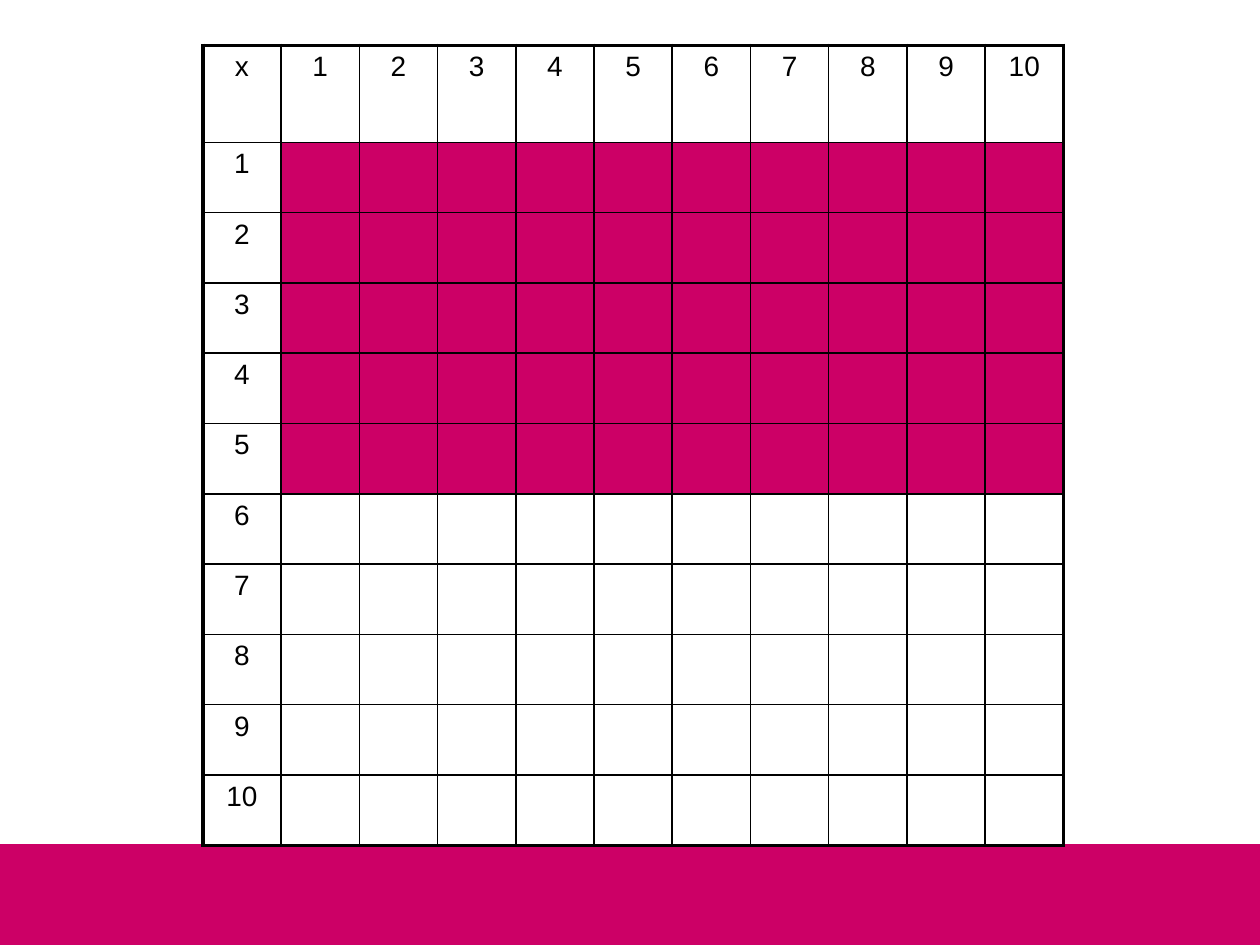
from lxml import etree
from pptx import Presentation
from pptx import util as u
from pptx.dml.color import RGBColor
from pptx.enum import shapes, text
from pptx.oxml import ns

MAGENTA = RGBColor(0xCC, 0x00, 0x66)
BLACK = RGBColor(0x00, 0x00, 0x00)
FACTORS = 10
SHADED_ROWS = 5
THIN, THICK = 1, 2.25


def add_border(cell, side, points):
    """Draw one side (L, R, T or B) of a cell in black."""
    edge = etree.SubElement(cell._tc.get_or_add_tcPr(), ns.qn(f"a:ln{side}"),
                            w=str(u.Pt(points)))
    paint = etree.SubElement(edge, ns.qn("a:solidFill"))
    etree.SubElement(paint, ns.qn("a:srgbClr"), val=str(BLACK))


deck = Presentation()
deck.slide_width, deck.slide_height = u.Inches(10), u.Inches(7.5)
slide = deck.slides.add_slide(deck.slide_layouts[6])

# Band along the foot of the slide
band_top = u.Inches(6.7)
band = slide.shapes.add_shape(shapes.MSO_SHAPE.RECTANGLE, 0, band_top,
                              deck.slide_width, deck.slide_height - band_top)
band.shadow.inherit = False
band.fill.solid()
band.fill.fore_color.rgb = MAGENTA
band.line.fill.background()

# Multiplication grid: one header row and column, then the factors
size = FACTORS + 1
grid_width, grid_height = u.Inches(6.83), u.Inches(6.35)
header_height = u.Inches(0.77)
grid = slide.shapes.add_table(size, size, u.Inches(1.61), u.Inches(0.36),
                              grid_width, grid_height).table
grid.first_row = grid.horz_banding = False
for column in grid.columns:
    column.width = grid_width // size
for row in grid.rows:
    row.height = (grid_height - header_height) // FACTORS
grid.rows[0].height = header_height

for r in range(size):
    for c in range(size):
        cell = grid.cell(r, c)
        on_outer_edge = {"L": c == 0, "R": c == FACTORS,
                         "T": r == 0, "B": r == FACTORS}
        for side, outer in on_outer_edge.items():
            add_border(cell, side, THICK if outer else THIN)

        if c > 0 and 0 < r <= SHADED_ROWS:
            cell.fill.solid()
            cell.fill.fore_color.rgb = MAGENTA
        else:
            cell.fill.background()

        if r == 0 or c == 0:
            cell.text = str(r + c) if r + c else "x"
            label = cell.text_frame.paragraphs[0]
            label.alignment = text.PP_ALIGN.CENTER
            label.font.name = "Arial"
            label.font.size = u.Pt(16)
            label.font.color.rgb = BLACK

deck.save("out.pptx")
